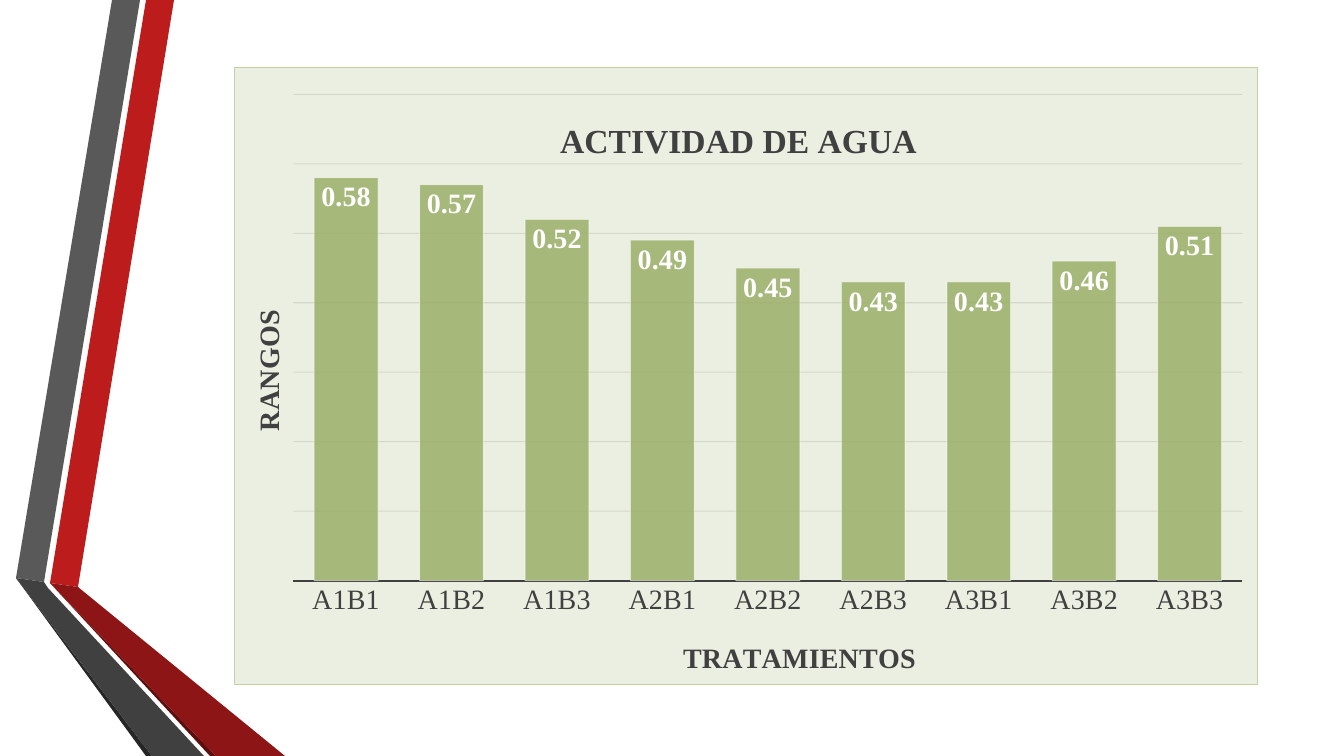
from dataclasses import dataclass

from lxml import etree
from pptx import Presentation
from pptx import util as u
from pptx.chart.data import CategoryChartData
from pptx.dml.color import RGBColor
from pptx.enum import chart as c
from pptx.oxml import parse_xml
from pptx.oxml.ns import nsdecls, qn

PX = 914400 / 100.8
FONT = "Times New Roman"
DARK = "404040"
WHITE = "FFFFFF"


@dataclass(frozen=True)
class Box:
    left: int
    top: int
    width: int
    height: int


@dataclass(frozen=True)
class Ribbon:
    color: str
    points: tuple[tuple[int, int], ...]


@dataclass(frozen=True)
class Caption:
    text: str
    size: int
    left: int
    top: int


SLIDE = Box(0, 0, 1344, 756)
CHART = Box(234, 67, 1024, 618)
PLOT = Box(293, 94, 950, 487)

RIBBONS = (
    Ribbon("BC1C1C", ((50, 583), (78, 587), (174, 0), (146, 0))),
    Ribbon("595959", ((140, 0), (112, 0), (16, 578), (44, 582))),
    Ribbon("262626", ((16, 578), (146, 756), (152, 756))),
    Ribbon("5E0E0E", ((50, 583), (210, 756), (216, 756))),
    Ribbon("8D1515", ((50, 583), (216, 756), (285, 756), (78, 587))),
    Ribbon(DARK, ((204, 756), (48, 588), (44, 582), (16, 578), (152, 756))),
)

HEADING = Caption("ACTIVIDAD DE AGUA", 24, 554, 113)
TREATMENTS = Caption("TRATAMIENTOS", 20, 678, 635)
RANGES = Caption("RANGOS", 20, 245, 305)

WATER_ACTIVITY = {
    "A1B1": 0.58, "A1B2": 0.57, "A1B3": 0.52,
    "A2B1": 0.49, "A2B2": 0.45, "A2B3": 0.43,
    "A3B1": 0.43, "A3B2": 0.46, "A3B3": 0.51,
}


def px(length: int) -> u.Emu:
    return u.Emu(round(length * PX))


def rgb(color: str) -> RGBColor:
    return RGBColor.from_string(color)


def paint(fill, color: str, opacity: int = 100) -> None:
    fill.solid()
    fill.fore_color.rgb = rgb(color)
    if opacity < 100:
        color_element = fill._xPr.find(qn("a:solidFill"))[0]
        etree.SubElement(color_element, qn("a:alpha"), val=str(opacity * 1000))


def style_font(font, size: int, color: str, bold: bool = False) -> None:
    font.name = FONT
    font.size = u.Pt(size)
    font.bold = bold
    font.color.rgb = rgb(color)


def draw_ribbon(slide, ribbon: Ribbon) -> None:
    builder = slide.shapes.build_freeform(*ribbon.points[0], scale=PX)
    builder.add_line_segments(ribbon.points[1:], close=True)
    shape = builder.convert_to_shape()
    shape.shadow.inherit = False
    paint(shape.fill, ribbon.color)
    shape.line.fill.background()


def place(parent, index: int, left: int, top: int, size: tuple[int, int] | None = None) -> None:
    for old_layout in parent.findall(qn("c:layout")):
        parent.remove(old_layout)
    settings = {"xMode": "edge", "yMode": "edge"}
    if size:
        settings = {"layoutTarget": "inner", **settings}
    settings["x"] = round((left - CHART.left) / CHART.width, 4)
    settings["y"] = round((top - CHART.top) / CHART.height, 4)
    if size:
        settings["w"] = round(size[0] / CHART.width, 4)
        settings["h"] = round(size[1] / CHART.height, 4)
    layout = etree.Element(qn("c:layout"))
    manual = etree.SubElement(layout, qn("c:manualLayout"))
    for name, value in settings.items():
        etree.SubElement(manual, qn(f"c:{name}"), val=str(value))
    parent.insert(index, layout)


def write_caption(title, caption: Caption) -> None:
    paragraph = title.text_frame.paragraphs[0]
    paragraph.text = caption.text
    style_font(paragraph.runs[0].font, caption.size, DARK, bold=True)
    place(title._element, 1, caption.left, caption.top)


def fill_chart_area(chart, color: str, border: str) -> None:
    area = parse_xml(
        f'<c:spPr {nsdecls("c", "a")}>'
        f'<a:solidFill><a:srgbClr val="{color}"/></a:solidFill>'
        f'<a:ln w="{u.Pt(0.75)}"><a:solidFill><a:srgbClr val="{border}"/></a:solidFill></a:ln>'
        "</c:spPr>"
    )
    chart._chartSpace.find(qn("c:chart")).addnext(area)


def format_axes(chart) -> None:
    treatments = chart.category_axis
    treatments.major_tick_mark = c.XL_TICK_MARK.NONE
    style_font(treatments.tick_labels.font, 20, DARK)
    paint(treatments.format.line.fill, DARK)
    treatments.format.line.width = u.Pt(1.5)
    write_caption(treatments.axis_title, TREATMENTS)

    ranges = chart.value_axis
    ranges.minimum_scale, ranges.maximum_scale, ranges.major_unit = 0, 0.7, 0.1
    ranges.major_tick_mark = c.XL_TICK_MARK.NONE
    ranges.tick_label_position = c.XL_TICK_LABEL_POSITION.NONE
    ranges.format.line.fill.background()
    grid = ranges.major_gridlines.format.line
    paint(grid.fill, "0D0D0D", 10)
    grid.width = u.Pt(0.75)
    write_caption(ranges.axis_title, RANGES)
    body = ranges.axis_title.text_frame._txBody.find(qn("a:bodyPr"))
    body.set("rot", "-5400000")
    body.set("vert", "horz")


def format_columns(plot) -> None:
    plot.gap_width = 65
    plot.vary_by_categories = False
    columns = plot.series[0]
    paint(columns.format.fill, "9BAF68", 85)
    paint(columns.format.line.fill, WHITE, 50)
    columns.format.line.width = u.Pt(0.75)
    labels = columns.data_labels
    labels.show_value = True
    labels.number_format = "0.00"
    labels.number_format_is_linked = False
    labels.position = c.XL_LABEL_POSITION.INSIDE_END
    style_font(labels.font, 20, WHITE, bold=True)


def draw_chart(slide) -> None:
    data = CategoryChartData(number_format="0.00")
    data.categories = list(WATER_ACTIVITY)
    data.add_series("Series 1", list(WATER_ACTIVITY.values()))
    bounds = (px(CHART.left), px(CHART.top), px(CHART.width), px(CHART.height))
    chart = slide.shapes.add_chart(c.XL_CHART_TYPE.COLUMN_CLUSTERED, *bounds, data).chart
    chart.has_legend = False
    style_font(chart.font, 20, "000000")
    fill_chart_area(chart, "EBEFE1", "C3CFA4")
    write_caption(chart.chart_title, HEADING)
    format_axes(chart)
    format_columns(chart.plots[0])
    plot_area = chart._chartSpace.find(".//" + qn("c:plotArea"))
    place(plot_area, 0, PLOT.left, PLOT.top, (PLOT.width, PLOT.height))


def main() -> None:
    presentation = Presentation()
    presentation.slide_width = px(SLIDE.width)
    presentation.slide_height = px(SLIDE.height)
    slide = presentation.slides.add_slide(presentation.slide_layouts[6])
    paint(slide.background.fill, WHITE)
    for ribbon in RIBBONS:
        draw_ribbon(slide, ribbon)
    draw_chart(slide)
    presentation.save("out.pptx")


if __name__ == "__main__":
    main()
